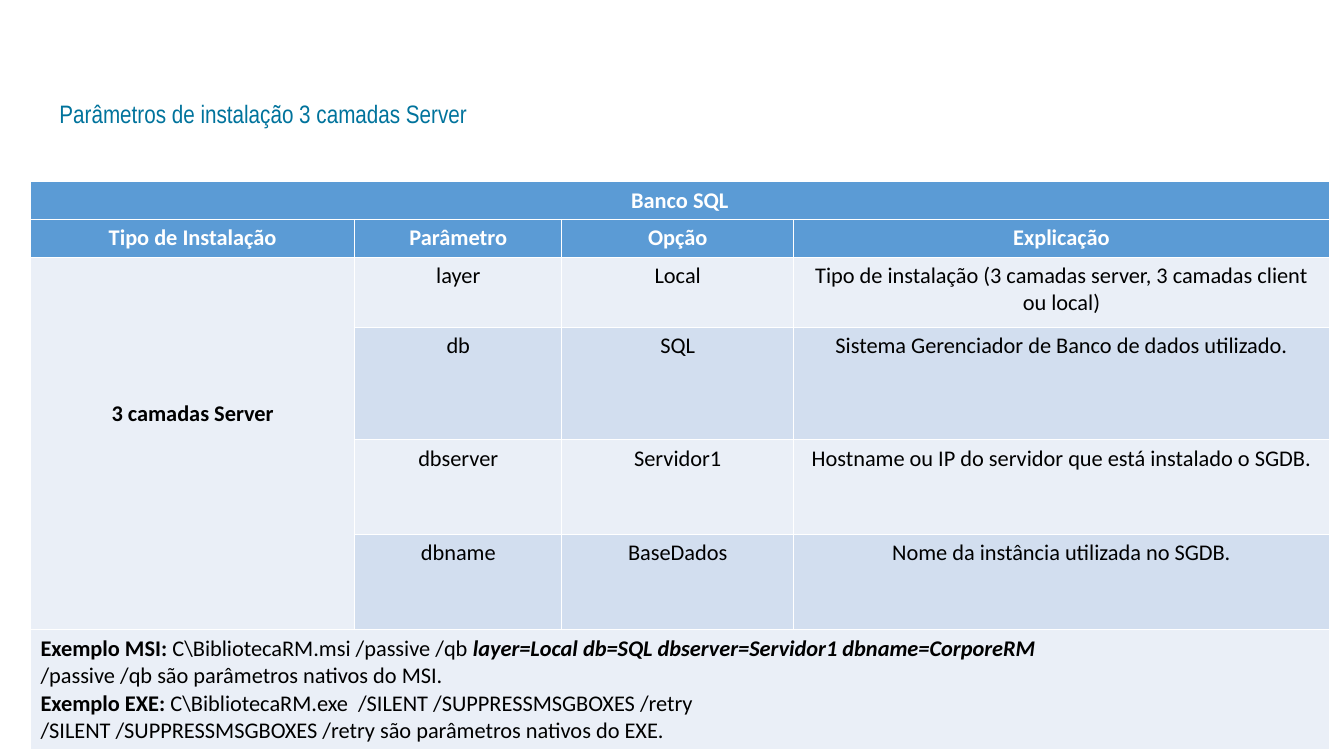
from dataclasses import dataclass

import pptx
import pptx.dml.color
import pptx.enum.text
import pptx.util

EMU_PER_PX = 9525
HEADER_FILL = "5B9BD5"
LIGHT_BAND = "EAEFF7"
DARK_BAND = "D2DEEF"
WHITE = "FFFFFF"
BLACK = "000000"
TITLE_COLOR = "00739C"
PP_ALIGN = pptx.enum.text.PP_ALIGN

COLUMN_WIDTHS = [309, 197, 221, 510]
ROW_HEIGHTS = [36, 36, 67, 107, 90, 91, 112]
HEADINGS = ["Tipo de Instalação", "Parâmetro", "Opção", "Explicação"]


@dataclass
class Parameter:
    name: str
    option: str
    explanation: str


@dataclass
class Span:
    text: str
    bold: bool = False
    italic: bool = False


PARAMETERS = [
    Parameter("layer", "Local",
              "Tipo de instalação (3 camadas server, 3 camadas client ou local)"),
    Parameter("db", "SQL", "Sistema Gerenciador de Banco de dados utilizado."),
    Parameter("dbserver", "Servidor1",
              "Hostname ou IP do servidor que está instalado o SGDB."),
    Parameter("dbname", "BaseDados", "Nome da instância utilizada no SGDB."),
]

EXAMPLES = [
    [Span("Exemplo MSI: ", bold=True),
     Span("C\\BibliotecaRM.msi /passive /qb "),
     Span("layer=Local db=SQL dbserver=Servidor1 dbname=CorporeRM",
          bold=True, italic=True)],
    [Span("/passive /qb são parâmetros nativos do MSI.")],
    [Span("Exemplo EXE: ", bold=True),
     Span("C\\BibliotecaRM.exe  /SILENT /SUPPRESSMSGBOXES /retry")],
    [Span("/SILENT /SUPPRESSMSGBOXES /retry são parâmetros nativos do EXE.")],
]


def px(length: int) -> pptx.util.Emu:
    return pptx.util.Emu(length * EMU_PER_PX)


def rgb(value: str) -> pptx.dml.color.RGBColor:
    return pptx.dml.color.RGBColor.from_string(value)


def format_font(font, size: int, color: str, family: str = "Calibri",
                bold: bool = False, italic: bool = False) -> None:
    font.name = family
    font.size = pptx.util.Pt(size)
    font.color.rgb = rgb(color)
    font.bold = bold
    font.italic = italic


def fill_cell(cell, fill: str) -> None:
    cell.fill.solid()
    cell.fill.fore_color.rgb = rgb(fill)


def write_cell(cell, text: str, fill: str, color: str = BLACK,
               bold: bool = False) -> None:
    fill_cell(cell, fill)
    paragraph = cell.text_frame.paragraphs[0]
    paragraph.text = text
    paragraph.alignment = PP_ALIGN.CENTER
    format_font(paragraph.runs[0].font, 16, color, bold=bold)


def write_examples(cell) -> None:
    fill_cell(cell, LIGHT_BAND)
    frame = cell.text_frame
    for index, spans in enumerate(EXAMPLES):
        paragraph = frame.add_paragraph() if index else frame.paragraphs[0]
        paragraph.alignment = PP_ALIGN.LEFT
        for span in spans:
            run = paragraph.add_run()
            run.text = span.text
            format_font(run.font, 16, BLACK, bold=span.bold, italic=span.italic)


def add_title(slide) -> None:
    title = slide.shapes.title
    title.left, title.top, title.width, title.height = map(px, (47, 92, 482, 45))
    frame = title.text_frame
    frame.text = "Parâmetros de instalação 3 camadas Server"
    frame.vertical_anchor = pptx.enum.text.MSO_ANCHOR.TOP
    frame.auto_size = pptx.enum.text.MSO_AUTO_SIZE.NONE
    paragraph = frame.paragraphs[0]
    paragraph.alignment = PP_ALIGN.LEFT
    paragraph.line_spacing = 0.9
    format_font(paragraph.runs[0].font, 18, TITLE_COLOR, "Arial Narrow")


def add_parameter_table(slide) -> None:
    table = slide.shapes.add_table(
        len(ROW_HEIGHTS), len(COLUMN_WIDTHS), px(29), px(173),
        px(sum(COLUMN_WIDTHS)), px(sum(ROW_HEIGHTS))).table
    for column, width in zip(table.columns, COLUMN_WIDTHS):
        column.width = px(width)
    for row, height in zip(table.rows, ROW_HEIGHTS):
        row.height = px(height)

    last_row, last_column = len(ROW_HEIGHTS) - 1, len(COLUMN_WIDTHS) - 1
    database = table.cell(0, 0)
    installation = table.cell(2, 0)
    examples = table.cell(last_row, 0)
    database.merge(table.cell(0, last_column))
    installation.merge(table.cell(last_row - 1, 0))
    examples.merge(table.cell(last_row, last_column))

    write_cell(database, "Banco SQL", HEADER_FILL, WHITE, bold=True)
    for column, heading in enumerate(HEADINGS):
        write_cell(table.cell(1, column), heading, HEADER_FILL, WHITE, bold=True)
    write_cell(installation, "3 camadas Server", LIGHT_BAND, bold=True)
    installation.margin_top = px(136)
    for index, parameter in enumerate(PARAMETERS):
        band = DARK_BAND if index % 2 else LIGHT_BAND
        texts = (parameter.name, parameter.option, parameter.explanation)
        for column, text in enumerate(texts, start=1):
            write_cell(table.cell(index + 2, column), text, band)
    write_examples(examples)


def main() -> None:
    presentation = pptx.Presentation()
    presentation.slide_width = px(1280)
    presentation.slide_height = px(720)
    title_only = presentation.slide_layouts[5]
    slide = presentation.slides.add_slide(title_only)
    add_title(slide)
    add_parameter_table(slide)
    presentation.save("out.pptx")


if __name__ == "__main__":
    main()
